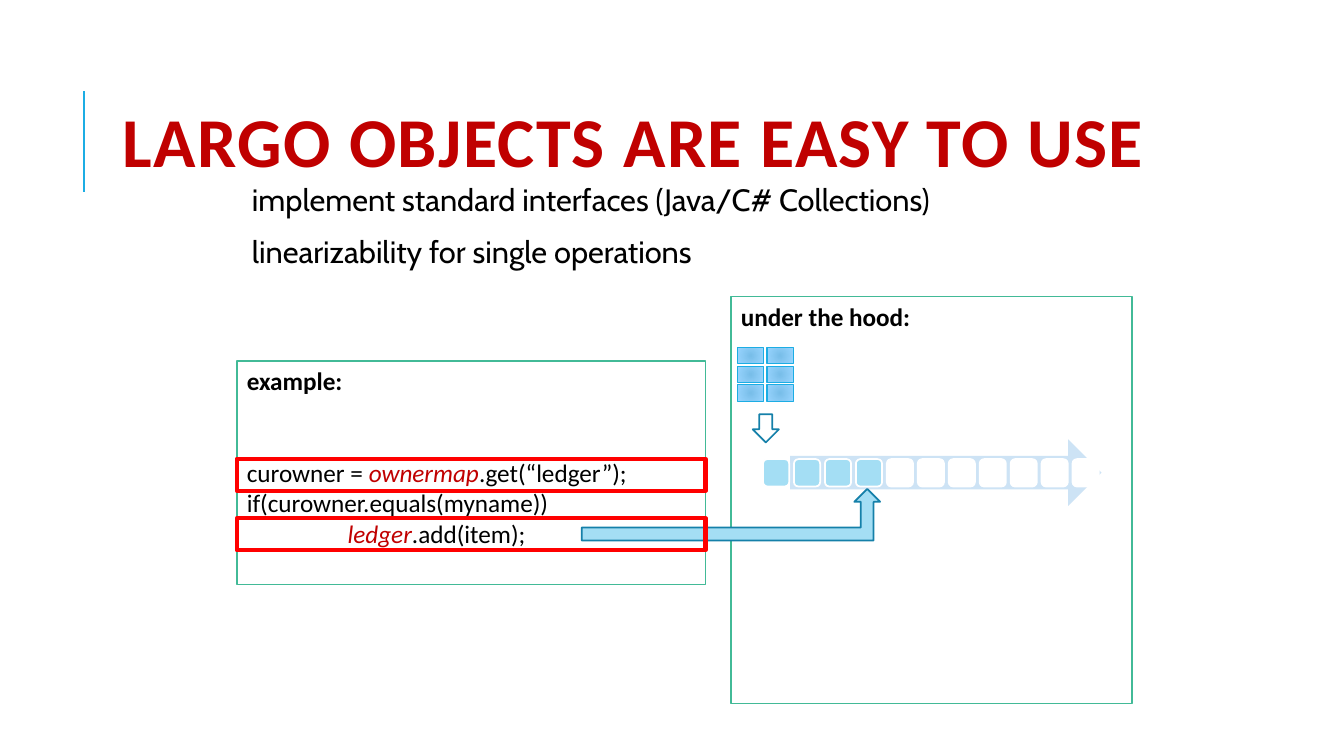
from lxml import etree
from pptx import Presentation
from pptx.dml.color import RGBColor
from pptx.enum.shapes import MSO_CONNECTOR as Link, MSO_SHAPE as Kind
from pptx.enum.text import MSO_ANCHOR as Anchor, PP_ALIGN as Align
from pptx.oxml.ns import qn
from pptx.util import Cm, Pt

RED, BLACK, WHITE = "C00000", "000000", "FFFFFF"
SKY, BLUE, TEAL, GREEN = "A4DEF4", "1CADE4", "1580A9", "42BA97"


def tint(code):
    return RGBColor.from_string(code)


def draw(host, kind, box, fill=None, line=None, width=1.25):
    shape = host.add_shape(kind, *map(Cm, box))
    shape.shadow.inherit = False
    if fill:
        shape.fill.solid()
        shape.fill.fore_color.rgb = tint(fill)
    else:
        shape.fill.background()
    if line:
        shape.line.color.rgb = tint(line)
        shape.line.width = Pt(width)
    else:
        shape.line.fill.background()
    return shape


def write(frame, text, first=False, size=18, font="Calibri", bold=False,
          before=0, after=0, lead=1.0, indent=0, space=0):
    frame.word_wrap = True
    para = frame.paragraphs[0] if first else frame.add_paragraph()
    para.alignment = Align.LEFT
    para.space_before, para.space_after = Pt(before), Pt(after)
    para.line_spacing = lead
    if indent:
        para._p.get_or_add_pPr().set("marL", str(Cm(indent)))
    parts = [(text, BLACK, False)] if isinstance(text, str) else text
    for words, color, slant in parts:
        run = para.add_run()
        run.text = words
        run.font.name, run.font.size = font, Pt(size)
        run.font.bold, run.font.italic = bold, slant
        run.font.color.rgb = tint(color)
        if space:
            run._r.get_or_add_rPr().set("spc", str(space * 100))


def head(host, box):
    left, top, wide, high = box
    rule = host.add_connector(Link.STRAIGHT, Cm(left - 0.73), Cm(top + 3.2),
                              Cm(left - 0.73), Cm(top + 0.66))
    rule.line.color.rgb = tint(BLUE)
    rule.line.width = Pt(1.5)
    etree.SubElement(rule._element.spPr, qn("a:effectLst"))
    frame = host.add_textbox(*map(Cm, box)).text_frame
    frame.vertical_anchor = Anchor.MIDDLE
    write(frame, [("LARGO OBJECTS ARE EASY TO USE", RED, False)], first=True,
          size=50, bold=True, lead=0.8, space=1)


def points(host, box):
    frame = host.add_textbox(*map(Cm, box)).text_frame
    frame.margin_left = frame.margin_right = Cm(0.13)
    frame.margin_top = frame.margin_bottom = Cm(0.13)
    lines = ("implement standard interfaces (Java/C# Collections)",
             "linearizability for single operations")
    for i, text in enumerate(lines):
        write(frame, text, first=i == 0, size=22, font="Cabin",
              before=12, after=2, lead=0.9, indent=0.25)


def panel(host, box, title):
    frame = draw(host, Kind.RECTANGLE, box, WHITE, GREEN).text_frame
    frame.vertical_anchor = Anchor.TOP
    write(frame, title, first=True, bold=True)
    return frame


def glow(shape):
    shape.fill.gradient()
    for stop, code in zip(shape.fill.gradient_stops, ("78BEE9", "9AD5FF")):
        stop.color.rgb = tint(code)
    grad = shape._element.spPr.find(qn("a:gradFill"))
    grad.remove(grad.find(qn("a:lin")))
    ring = etree.SubElement(grad, qn("a:path"), path="circle")
    etree.SubElement(ring, qn("a:fillToRect"),
                     {side: "100000" for side in "ltrb"})


def log(host, box):
    left, top, wide, high = box
    group = host.add_group_shape().shapes
    draw(group, Kind.RIGHT_ARROW, (left + 0.68, top, wide - 0.68, high), "CDE3F5")
    for i in range(12):
        draw(group, Kind.ROUNDED_RECTANGLE,
             (left + i * 0.78, top + 0.5, 0.66, 0.69),
             SKY if i < 4 else WHITE, WHITE)


def table(host, left, top):
    group = host.add_group_shape().shapes
    for row in range(3):
        for col in range(2):
            glow(draw(group, Kind.RECTANGLE,
                      (left + col * 0.74, top + row * 0.47, 0.66, 0.41),
                      line=BLUE, width=0.75))


def hood(host, box):
    left, top, wide, high = box
    panel(host, box, "under the hood:")
    log(host, (left + 0.81, top + 3.6, 8.53, 1.68))
    draw(host, Kind.DOWN_ARROW, (left + 0.55, top + 2.97, 0.66, 0.71), WHITE, TEAL)
    table(host, left + 0.17, top + 1.29)


def sample(host, box):
    left, top, wide, high = box
    frame = panel(host, box, "example:")
    write(frame, [("curowner = ", BLACK, False), ("ownermap", RED, True),
                  (".get(“ledger”);", BLACK, False)], before=44)
    write(frame, "if(curowner.equals(myname))")
    write(frame, [("ledger", RED, True), (".add(item);", BLACK, False)],
          indent=2.54)
    draw(host, Kind.BENT_UP_ARROW, (left + 8.69, top + 3.23, 7.52, 1.3), SKY, TEAL)
    for drop in (2.47, 3.97):
        draw(host, Kind.RECTANGLE, (left, top + drop, wide, 0.81),
             line="FF0000", width=3)


def main():
    deck = Presentation()
    deck.slide_width, deck.slide_height = Cm(33.87), Cm(19.05)
    host = deck.slides.add_slide(deck.slide_layouts[6]).shapes
    hood(host, (18.42, 7.47, 10.11, 10.26))
    head(host, (2.84, 1.63, 29.77, 4.17))
    points(host, (5.97, 4.52, 22.25, 9.07))
    sample(host, (5.97, 9.09, 11.81, 5.64))
    deck.save("out.pptx")


if __name__ == "__main__":
    main()
